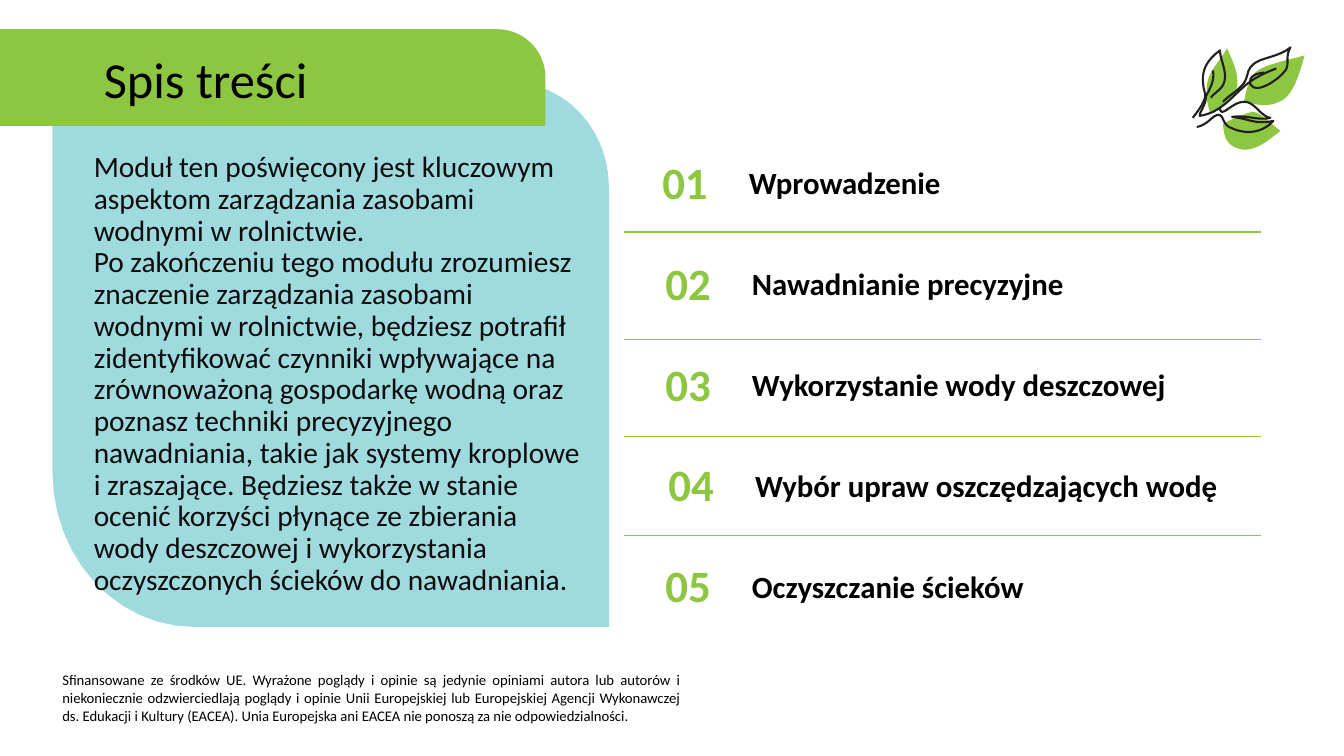
from pptx import Presentation, util as u
from pptx.dml.color import RGBColor
from pptx.enum import shapes, text
from pptx.oxml import parse_xml
from pptx.oxml.ns import nsdecls

color = RGBColor.from_string
GREEN, BLUE, INK, BLACK = "8DC641", "9FDADF", "231F20", "000000"
FONT = "Calibri"
FIRST_ROW, ROW_STEP, ROW_HEIGHT = 1.46, 1.0, 0.75
NUMBER_COLUMN, LABEL_COLUMN = 6.41, 7.33
RULE_LEFT, RULE_RIGHT = 6.19, 12.51
UNITS, CURVE_STEPS = 1000, 12

presentation = Presentation()
presentation.slide_width = u.Inches(13.33)
presentation.slide_height = u.Inches(7.5)
slide = presentation.slides.add_slide(presentation.slide_layouts[1])


def add_outline(start, pieces, closed):
    """Trace pieces in inches: a pair is a straight line, six numbers a cubic curve."""
    points, (x, y) = [], start
    for piece in pieces:
        if len(piece) == 2:
            points.append(piece)
        else:
            ax, ay, bx, by, cx, cy = piece
            for step in range(1, CURVE_STEPS + 1):
                t = step / CURVE_STEPS
                s = 1 - t
                points.append((s**3 * x + 3 * s * s * t * ax + 3 * s * t * t * bx + t**3 * cx,
                               s**3 * y + 3 * s * s * t * ay + 3 * s * t * t * by + t**3 * cy))
        x, y = points[-1]
    builder = slide.shapes.build_freeform(start[0] * UNITS, start[1] * UNITS, u.Inches(1) / UNITS)
    builder.add_line_segments([(px * UNITS, py * UNITS) for px, py in points], close=closed)
    shape = builder.convert_to_shape()
    shape.shadow.inherit = False
    return shape


def write(shape, box, words, size, fill, bold=False, anchor=text.MSO_ANCHOR.MIDDLE,
          align=text.PP_ALIGN.LEFT, spacing=0.9):
    """Place a text shape and format all of its paragraphs alike."""
    shape.left, shape.top, shape.width, shape.height = map(u.Inches, box)
    frame = shape.text_frame
    frame.text = words
    frame.word_wrap = True
    frame.auto_size = text.MSO_AUTO_SIZE.NONE
    frame.vertical_anchor = anchor
    for paragraph in frame.paragraphs:
        paragraph.alignment = align
        paragraph.line_spacing = spacing
        paragraph.space_before = u.Pt(0)
        for run in paragraph.runs:
            run.font.name, run.font.size, run.font.bold = FONT, u.Pt(size), bold
            run.font.color.rgb = color(fill)


# Panel and title banner
panel = add_outline((6.04, 6.22), [
    (1.93, 6.22), (1.15, 6.22, 0.52, 5.53, 0.52, 4.68), (0.52, 0.82),
    (5.08, 0.82), (5.61, 0.82, 6.04, 1.29, 6.04, 1.86)], True)
panel.fill.solid()
panel.fill.fore_color.rgb = color(BLUE)
panel.line.fill.background()

banner = slide.shapes.add_shape(shapes.MSO_SHAPE.ROUND_1_RECTANGLE,
                                0, u.Inches(0.29), u.Inches(5.41), u.Inches(0.96))
banner.adjustments[0] = 0.5
banner.shadow.inherit = False
banner.fill.solid()
banner.fill.fore_color.rgb = color(GREEN)
banner.line.fill.background()

# Rules between the entries
for height in (2.3, 3.37, 4.33, 5.31):
    rule = slide.shapes.add_connector(
        shapes.MSO_CONNECTOR.STRAIGHT, u.Inches(RULE_RIGHT), u.Inches(height),
        u.Inches(RULE_LEFT), u.Inches(height))
    rule.line.color.rgb = color(GREEN)
    rule.line.width = u.Pt(1)
    rule.element.spPr.append(parse_xml(f"<a:effectLst {nsdecls('a')}/>"))

# Funding statement
write(slide.shapes.add_textbox(0, 0, 0, 0), (0.52, 6.61, 6.33, 0.63),
      "Sfinansowane ze środków UE. Wyrażone poglądy i opinie są jedynie opiniami autora lub autorów "
      "i niekoniecznie odzwierciedlają poglądy i opinie Unii Europejskiej lub Europejskiej Agencji "
      "Wykonawczej ds. Edukacji i Kultury (EACEA). Unia Europejska ani EACEA nie ponoszą za nie "
      "odpowiedzialności.",
      10.5, BLACK, anchor=text.MSO_ANCHOR.TOP, align=text.PP_ALIGN.JUSTIFY, spacing=1.0)

# Numbered entries, each with its small shift to the right
entries = [("Wprowadzenie", 0), ("Nawadnianie precyzyjne", 0.03),
           ("Wykorzystanie wody deszczowej", 0.03),
           ("Wybór upraw oszczędzających wodę", 0.06), ("Oczyszczanie ścieków", 0.03)]
for row, (label, shift) in enumerate(entries):
    top = FIRST_ROW + row * ROW_STEP
    write(slide.shapes.add_textbox(0, 0, 0, 0), (NUMBER_COLUMN + shift, top, 0.77, ROW_HEIGHT),
          f"{row + 1:02}", 32, GREEN, bold=True, align=text.PP_ALIGN.CENTER)
    write(slide.shapes.add_textbox(0, 0, 0, 0), (LABEL_COLUMN + shift, top, 4.88, ROW_HEIGHT),
          label, 22, BLACK, bold=True)

# Description and title, raised above the panel and banner
title, body = slide.shapes.title, slide.placeholders[1]
for placeholder in (body, title):
    placeholder.element.getparent().append(placeholder.element)
write(body, (0.58, 1.46, 5.33, 4.36),
      "Moduł ten poświęcony jest kluczowym aspektom zarządzania zasobami wodnymi w rolnictwie.\n"
      "Po zakończeniu tego modułu zrozumiesz znaczenie zarządzania zasobami wodnymi w rolnictwie, "
      "będziesz potrafił zidentyfikować czynniki wpływające na zrównoważoną gospodarkę wodną oraz "
      "poznasz techniki precyzyjnego nawadniania, takie jak systemy kroplowe i zraszające. Będziesz "
      "także w stanie ocenić korzyści płynące ze zbierania wody deszczowej i wykorzystania "
      "oczyszczonych ścieków do nawadniania.",
      21, "0D0D0D", anchor=text.MSO_ANCHOR.TOP)
for paragraph in body.text_frame.paragraphs:
    properties = paragraph._p.get_or_add_pPr()
    properties.set("marL", str(u.Inches(0.25)))
    properties.set("indent", "0")
    properties.append(parse_xml(f"<a:buNone {nsdecls('a')}/>"))
write(title, (0.93, 0.42, 5.51, 0.79), "Spis treści", 36, BLACK)

# Leaf ornament: green leaves under ink strokes
leaves = [
    ((12.05, 1.1), [(12.15, 1.05, 12.25, 0.97, 12.27, 0.86), (12.29, 0.74, 12.23, 0.61, 12.17, 0.48),
                    (12.12, 0.58, 12.01, 0.68, 11.98, 0.8), (11.96, 0.89, 11.96, 0.99, 12, 1.11)]),
    ((12.74, 0.98), [(12.84, 0.9, 12.89, 0.72, 12.94, 0.55), (12.84, 0.58, 12.6, 0.63, 12.51, 0.68),
                     (12.4, 0.73, 12.37, 0.85, 12.34, 1), (12.48, 1.06, 12.63, 1.06, 12.74, 0.98)]),
    ((12.7, 1.3), [(12.6, 1.22, 12.5, 1.11, 12.42, 1.11), (12.34, 1.13, 12.22, 1.18, 12.13, 1.23),
                   (12.14, 1.35, 12.16, 1.43, 12.27, 1.47), (12.42, 1.53, 12.57, 1.4, 12.7, 1.3)]),
]
strokes = [
    ((11.83, 1.17), [(11.9, 1.08, 11.97, 0.98, 11.95, 0.92), (11.9, 0.74, 11.94, 0.62, 12.1, 0.5),
                     (12.1, 0.58, 12.15, 0.66, 12.15, 0.76), (12.15, 0.88, 12.06, 0.9, 12.01, 0.97)]),
    ((12.03, 0.7), [(12.05, 0.8, 12, 0.88, 11.96, 0.96), (11.96, 1.05, 11.9, 1.1, 11.9, 1.15),
                    (12.1, 1.12, 12.2, 0.98, 12.36, 0.84), (12.45, 0.77, 12.55, 0.72, 12.66, 0.68)]),
    ((12.13, 1.01), [(12.2, 0.93, 12.34, 0.88, 12.37, 0.75), (12.4, 0.55, 12.65, 0.6, 12.8, 0.47),
                     (12.74, 0.57, 12.8, 0.65, 12.74, 0.71), (12.68, 0.79, 12.45, 0.95, 12.4, 0.83),
                     (12.39, 0.75, 12.46, 0.73, 12.54, 0.72)]),
    ((12.1, 1.06), [(12.1, 1.2, 12.22, 1, 12.35, 1.01), (12.45, 1.02, 12.5, 1.15, 12.6, 1.17),
                    (12.48, 1.2, 12.37, 1.14, 12.22, 1.16), (12.4, 1.18, 12.45, 1.24, 12.63, 1.2),
                    (12.5, 1.34, 12.33, 1.33, 12.19, 1.26), (12.12, 1.22, 12.14, 1.14, 12.08, 1.14),
                    (12.02, 1.15, 11.98, 1.24, 11.87, 1.26)]),
]
for start, curves in leaves:
    leaf = add_outline(start, curves, True)
    leaf.fill.solid()
    leaf.fill.fore_color.rgb = color(GREEN)
    leaf.line.fill.background()
for start, curves in strokes:
    stroke = add_outline(start, curves, False)
    stroke.fill.background()
    stroke.line.color.rgb = color(INK)
    stroke.line.width = u.Pt(1.5)

presentation.save("out.pptx")
